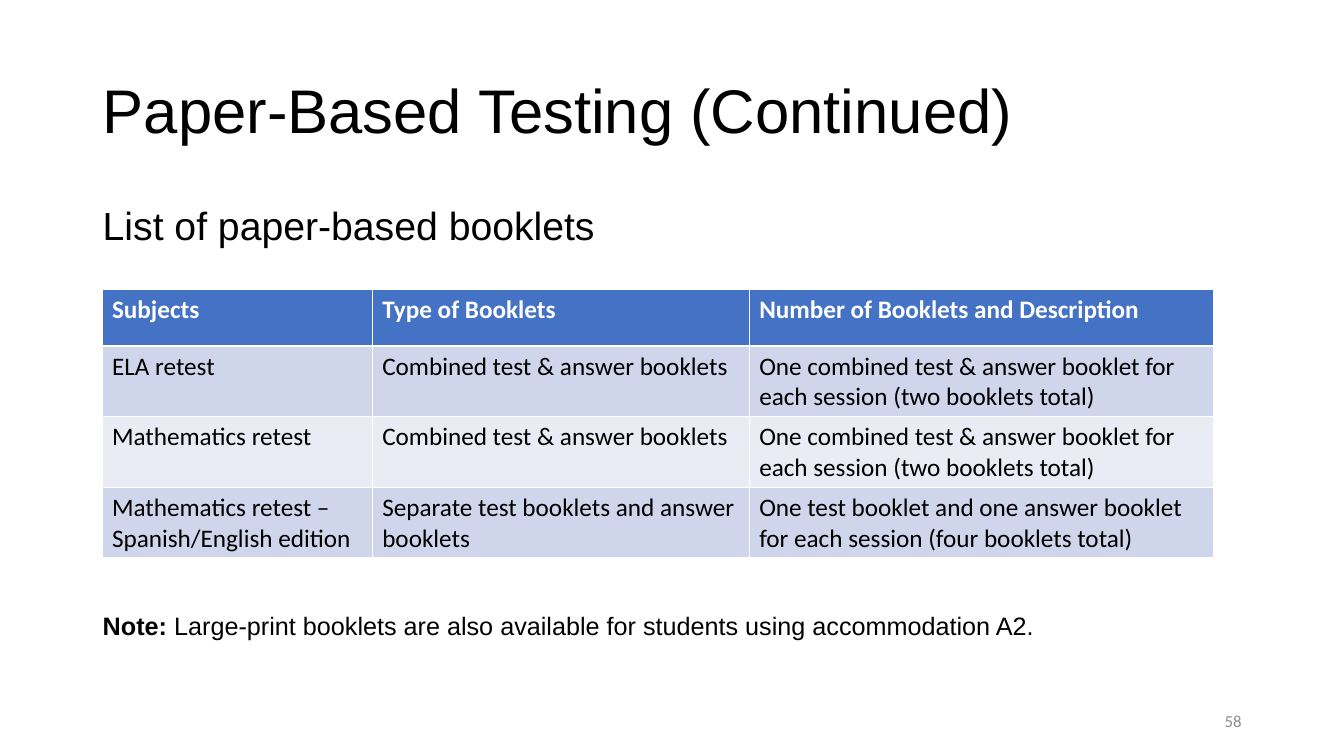
from pptx import Presentation
from pptx.dml.color import RGBColor
from pptx.enum.text import MSO_ANCHOR as Anchor, MSO_AUTO_SIZE as AutoSize, PP_ALIGN as Align
from pptx.util import Cm, Pt

BLACK = RGBColor(0x00, 0x00, 0x00)
WHITE = RGBColor(0xFF, 0xFF, 0xFF)
GRAY = RGBColor(0x8C, 0x8C, 0x8C)
BLUE = RGBColor(0x44, 0x72, 0xC4)
BANDS = [RGBColor(0xE9, 0xEB, 0xF5), RGBColor(0xCF, 0xD5, 0xEA)]

TITLE = "Paper-Based Testing (Continued)"
SUBTITLE = "List of paper-based booklets"
NOTE = [
    ("Note: ", True),
    ("Large-print booklets are also available for students using accommodation A2.", False),
]
PAGE_NUMBER = "58"
BOOKLETS = [
    ("Subjects", "Type of Booklets", "Number of Booklets and Description"),
    ("ELA retest", "Combined test & answer booklets",
     "One combined test & answer booklet for each session (two booklets total)"),
    ("Mathematics retest", "Combined test & answer booklets",
     "One combined test & answer booklet for each session (two booklets total)"),
    ("Mathematics retest – Spanish/English edition",
     "Separate test booklets and answer booklets",
     "One test booklet and one answer booklet for each session (four booklets total)"),
]
COLUMN_WIDTHS = [6.81, 9.5, 11.71]
ROW_HEIGHT = 1.42
LEFT = 2.34
WIDTH = 29.21


def write(frame, spans, size=18, font="Arial", color=BLACK, align=Align.LEFT,
          anchor=Anchor.TOP, wrap=True, spacing=None, before=None):
    frame.word_wrap = wrap
    frame.vertical_anchor = anchor
    para = frame.paragraphs[0]
    para.alignment = align
    para.line_spacing = spacing
    para.space_before = before
    for text, bold in spans:
        span = para.add_run()
        span.text = text
        span.font.name = font
        span.font.size = Pt(size)
        span.font.bold = bold
        span.font.color.rgb = color


def add_box(page, left, top, width, height):
    return page.shapes.add_textbox(Cm(left), Cm(top), Cm(width), Cm(height)).text_frame


def add_booklet_table(page):
    table = page.shapes.add_table(
        len(BOOKLETS), len(COLUMN_WIDTHS), Cm(2.57), Cm(7.3),
        Cm(sum(COLUMN_WIDTHS)), Cm(ROW_HEIGHT * len(BOOKLETS))).table
    for column, width in zip(table.columns, COLUMN_WIDTHS):
        column.width = Cm(width)
    for r, row in enumerate(BOOKLETS):
        header = r == 0
        for c, text in enumerate(row):
            cell = table.cell(r, c)
            cell.fill.solid()
            cell.fill.fore_color.rgb = BLUE if header else BANDS[r % 2]
            write(cell.text_frame, [(text, header)], font="Calibri",
                  color=WHITE if header else BLACK)


def main():
    deck = Presentation()
    deck.slide_width, deck.slide_height = Cm(33.87), Cm(19.05)
    page = deck.slides.add_slide(deck.slide_layouts[5])

    title = page.shapes.title
    title.left, title.top, title.width, title.height = Cm(LEFT), Cm(1.01), Cm(WIDTH), Cm(3.68)
    write(title.text_frame, [(TITLE, False)], size=44, anchor=Anchor.MIDDLE, spacing=0.9)

    write(add_box(page, 23.92, 17.66, 7.62, 1.01), [(PAGE_NUMBER, False)], size=12,
          font="Calibri", color=GRAY, align=Align.RIGHT, anchor=Anchor.MIDDLE)
    write(add_box(page, LEFT, 5.07, WIDTH, 12.09), [(SUBTITLE, False)], size=28,
          spacing=0.9, before=Pt(10))
    note = add_box(page, LEFT, 15.26, 24.17, 1.03)
    write(note, NOTE, wrap=False)
    note.auto_size = AutoSize.SHAPE_TO_FIT_TEXT

    add_booklet_table(page)
    deck.save("out.pptx")


if __name__ == "__main__":
    main()
